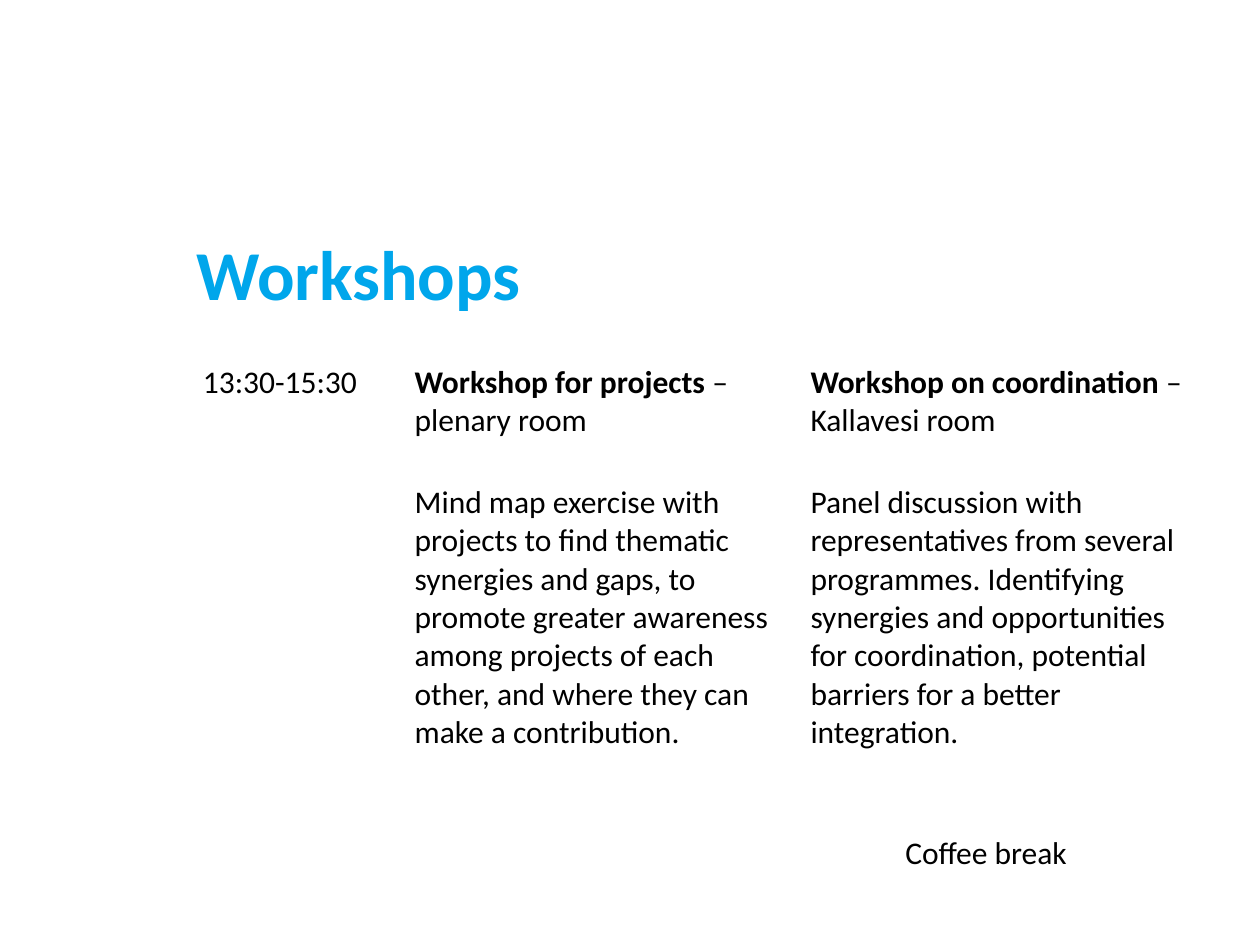
from dataclasses import dataclass

from pptx import Presentation
from pptx.dml.color import RGBColor
from pptx.enum.text import MSO_ANCHOR
from pptx.util import Cm, Pt

MIDDLE = MSO_ANCHOR.MIDDLE
TOP = MSO_ANCHOR.TOP
BLANK_LAYOUT = 6
BLACK = "000000"
BLUE = "00A6EB"
BODY_FORMAT = {"name": "Calibri", "size": Pt(18), "bold": False}
STRONG_FORMAT = BODY_FORMAT | {"bold": True}
TITLE_FORMAT = STRONG_FORMAT | {"size": Pt(40)}
CELL_FORMAT = {
    "margin_left": Cm(0.18),
    "margin_right": Cm(0.18),
    "margin_top": Cm(0),
    "margin_bottom": Cm(0),
    "vertical_anchor": TOP,
}


@dataclass
class Label:
    text: str
    left: float
    top: float
    width: float
    height: float
    font_format: dict
    color: str
    frame_format: dict


@dataclass
class Workshop:
    name: str
    room: str
    summary: str


TITLE = Label("Workshops", 3.71, 4.45, 18, 2.08, TITLE_FORMAT, BLUE,
              {"word_wrap": True, "vertical_anchor": MIDDLE})
BREAK = Label("Coffee break", 18, 16.66, 3.82, 1.02, BODY_FORMAT, BLACK,
              {"word_wrap": False, "vertical_anchor": TOP})
TIME_SLOT = "13:30-15:30"
WORKSHOPS = [
    Workshop(
        "Workshop for projects ", "– plenary room",
        "Mind map exercise with projects to find thematic synergies and gaps, "
        "to promote greater awareness among projects of each other, and where "
        "they can make a contribution."),
    Workshop(
        "Workshop on coordination ", "– Kallavesi room",
        "Panel discussion with representatives from several programmes. "
        "Identifying synergies and opportunities for coordination, potential "
        "barriers for a better integration."),
]
TIME_WIDTH, WORKSHOP_WIDTH = 4.27, 7.98
HEADING_HEIGHT, SUMMARY_HEIGHT = 1.65, 6.2
SUMMARY_GAP = 0.77


def apply_format(target, values: dict) -> None:
    for attribute, value in values.items():
        setattr(target, attribute, value)


def set_color(font, color: str) -> None:
    font.color.rgb = RGBColor.from_string(color)


def add_text(paragraph, text: str, font_format: dict, color: str = BLACK) -> None:
    run = paragraph.add_run()
    run.text = text
    apply_format(run.font, font_format)
    set_color(run.font, color)


def draw_label(slide, label: Label) -> None:
    frame = slide.shapes.add_textbox(
        Cm(label.left), Cm(label.top), Cm(label.width), Cm(label.height)).text_frame
    apply_format(frame, label.frame_format)
    add_text(frame.paragraphs[0], label.text, label.font_format, label.color)


def fill_cell(cell, *parts: tuple[str, dict], gap: float = 0) -> None:
    cell.fill.background()
    apply_format(cell, CELL_FORMAT | {"margin_top": Cm(gap)})
    for text, font_format in parts:
        add_text(cell.text_frame.paragraphs[0], text, font_format)


def draw_schedule(slide, workshops: list[Workshop]) -> None:
    widths = [TIME_WIDTH] + [WORKSHOP_WIDTH] * len(workshops)
    heights = [HEADING_HEIGHT, SUMMARY_HEIGHT]
    schedule = slide.shapes.add_table(
        len(heights), len(widths), Cm(3.91), Cm(7.32),
        Cm(sum(widths)), Cm(sum(heights))).table
    apply_format(schedule, {"first_row": False, "horz_banding": False})
    for column, width in zip(schedule.columns, widths):
        column.width = Cm(width)
    for row, height in zip(schedule.rows, heights):
        row.height = Cm(height)
    fill_cell(schedule.cell(0, 0), (TIME_SLOT, BODY_FORMAT))
    fill_cell(schedule.cell(1, 0))
    for position, workshop in enumerate(workshops, start=1):
        fill_cell(schedule.cell(0, position),
                  (workshop.name, STRONG_FORMAT), (workshop.room, BODY_FORMAT))
        fill_cell(schedule.cell(1, position),
                  (workshop.summary, BODY_FORMAT), gap=SUMMARY_GAP)


def main() -> None:
    deck = Presentation()
    apply_format(deck, {"slide_width": Cm(25.4), "slide_height": Cm(19.05)})
    slide = deck.slides.add_slide(deck.slide_layouts[BLANK_LAYOUT])
    draw_label(slide, TITLE)
    draw_schedule(slide, WORKSHOPS)
    draw_label(slide, BREAK)
    deck.save("out.pptx")


if __name__ == "__main__":
    main()
